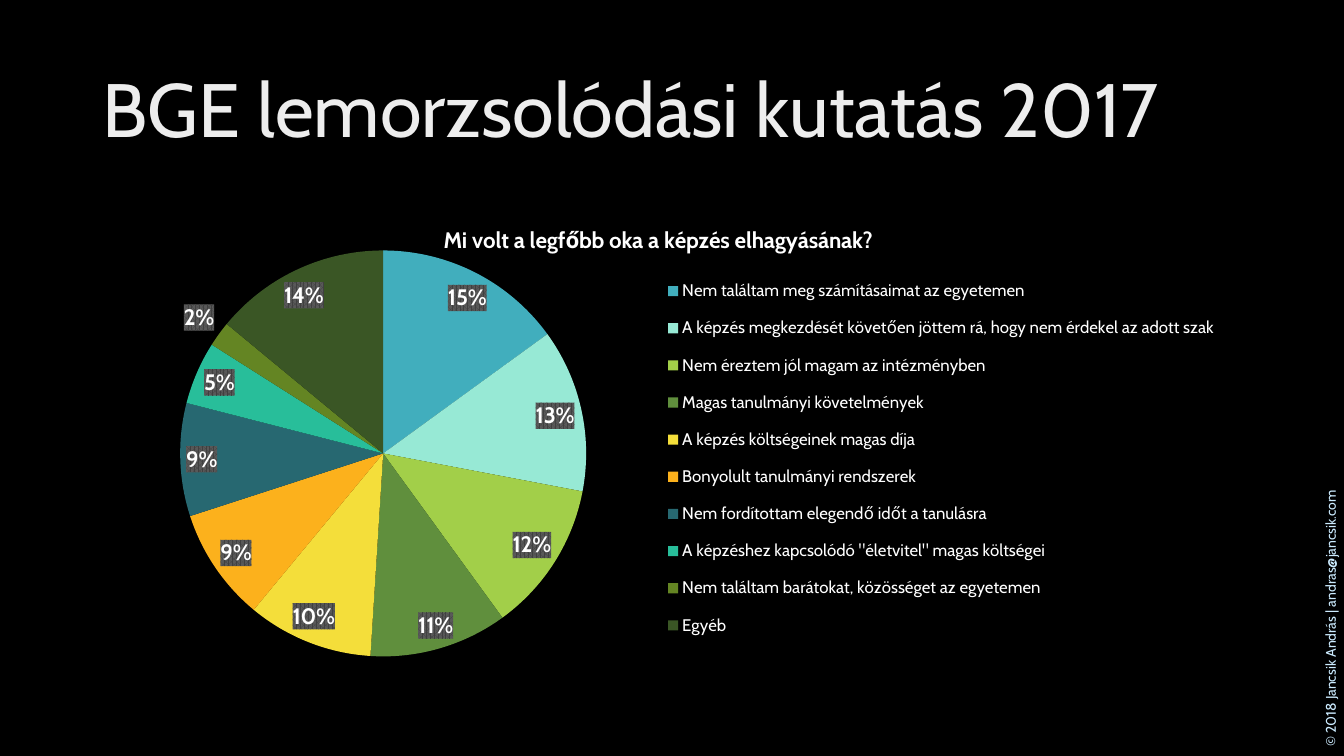
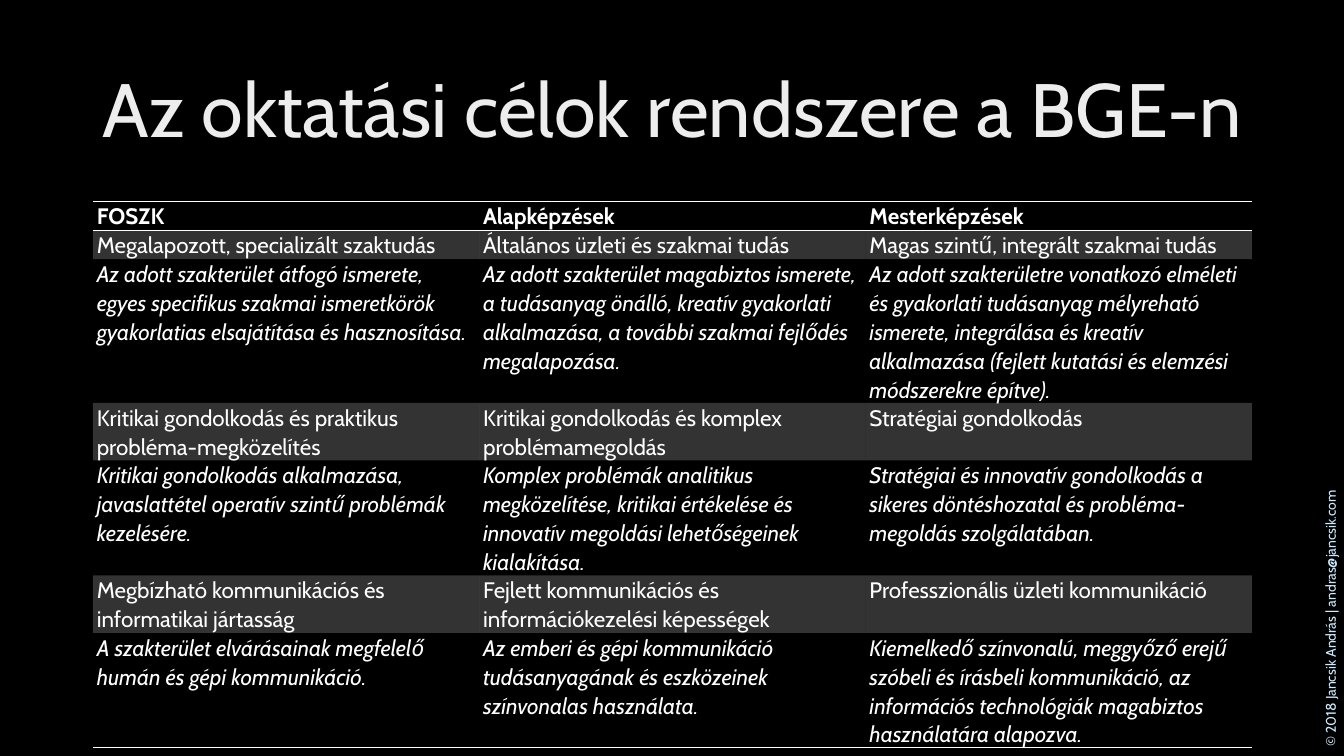
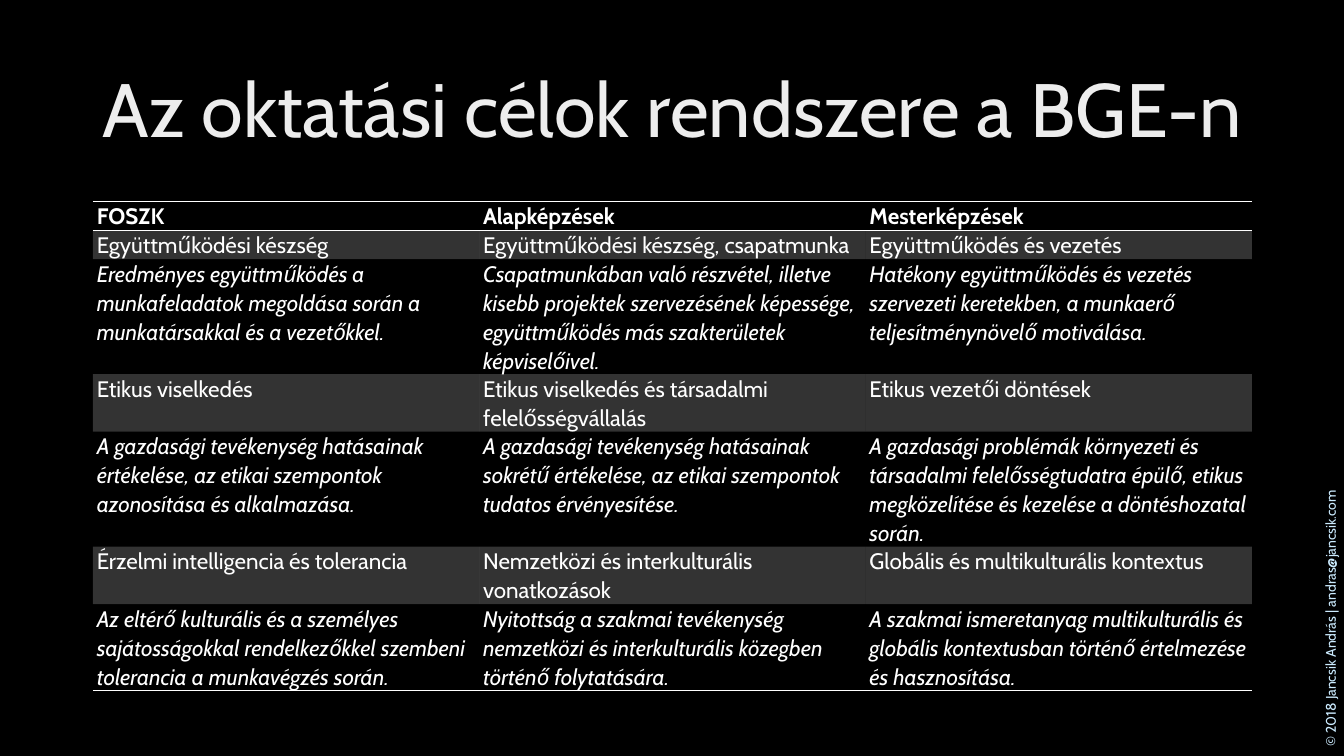
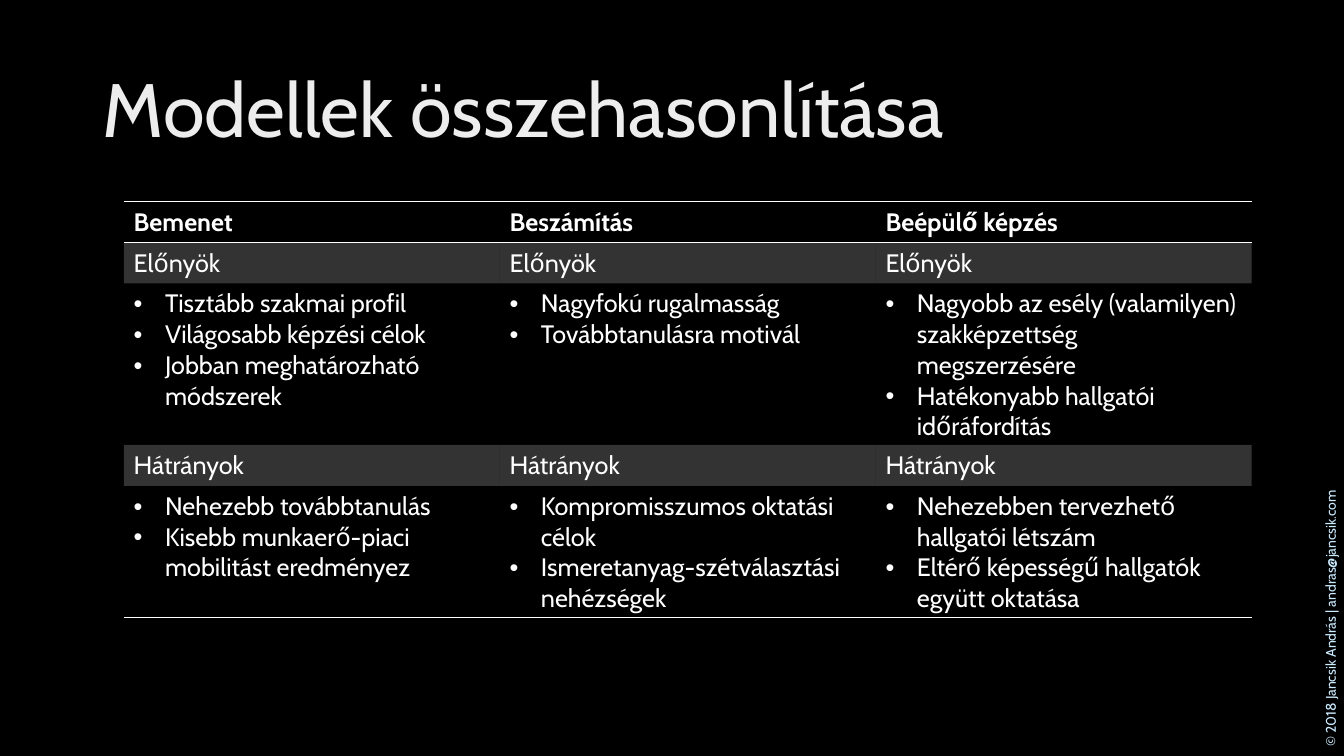
import dataclasses

import pptx
import pptx.chart.data
import pptx.dml.color
import pptx.enum.chart
import pptx.enum.text
import pptx.oxml
import pptx.oxml.ns
import pptx.util

Cm = pptx.util.Cm
Pt = pptx.util.Pt
qn = pptx.oxml.ns.qn


@dataclasses.dataclass(frozen=True)
class Theme:
    font: str = "Cabin"
    back: str = "000000"
    text: str = "FFFFFF"
    title: str = "EDEDED"
    foot: str = "CCECFF"
    label_front: str = "404040"
    label_back: str = "595959"
    slices: tuple = ("41AEBD", "97E9D5", "A2CF49", "608F3D", "F4DE3A",
                     "FCB11C", "276871", "28BE9A", "648523", "3A5625")
    band_alpha: int = 20
    title_size: int = 54
    foot_size: int = 10
    chart_size: int = 16
    key_size: int = 12


@dataclasses.dataclass(frozen=True)
class Look:
    """How the cells of a table are set."""
    size: int
    side: float
    edge: float
    height: float
    lead: float
    italic: bool = False
    bullet: bool = False


THEME = Theme()
DENSE = Look(size=16, side=0.1, edge=0, height=0.7, lead=1.07, italic=True)
LOOSE = Look(size=18, side=0.25, edge=0.13, height=1.03, lead=1, bullet=True)

WIDE, HIGH = 33.87, 19.05
TITLE_BOX = (2.34, 1.02, 29.21, 3.68)
FOOT_BOX = (24, 9.2, HIGH, 0.69)
TABLE_BOX = (2.34, 5.08, 29.21)
MODEL_BOX = (3.12, 5.08, 28.42)
CHART_BOX = (3.12, 5.08, 28.42, 12.09)

FOOT = "© 2018 Jancsik András | andras@jancsik.com"
GOALS = "Az oktatási célok rendszere a BGE-n"
LEVELS = ("FOSZK", "Alapképzések", "Mesterképzések")

REASONS = (
    ("Nem találtam meg számításaimat az egyetemen", 15),
    ("A képzés megkezdését követően jöttem rá, hogy nem érdekel az adott szak", 13),
    ("Nem éreztem jól magam az intézményben", 12),
    ("Magas tanulmányi követelmények", 11),
    ("A képzés költségeinek magas díja", 10),
    ("Bonyolult tanulmányi rendszerek", 9),
    ("Nem fordítottam elegendő időt a tanulásra", 9),
    ('A képzéshez kapcsolódó "életvitel" magas költségei', 5),
    ("Nem találtam barátokat, közösséget az egyetemen", 2),
    ("Egyéb", 14),
)

SKILLS = (
    LEVELS,
    ("Megalapozott, specializált szaktudás",
     "Általános üzleti és szakmai tudás",
     "Magas szintű, integrált szakmai tudás"),
    ("Az adott szakterület átfogó ismerete, egyes specifikus szakmai "
     "ismeretkörök gyakorlatias elsajátítása és hasznosítása.",
     "Az adott szakterület magabiztos ismerete, a tudásanyag önálló, kreatív "
     "gyakorlati alkalmazása, a további szakmai fejlődés megalapozása.",
     "Az adott szakterületre vonatkozó elméleti és gyakorlati tudásanyag "
     "mélyreható ismerete, integrálása és kreatív alkalmazása (fejlett "
     "kutatási és elemzési módszerekre építve)."),
    ("Kritikai gondolkodás és praktikus probléma-megközelítés",
     "Kritikai gondolkodás és komplex problémamegoldás",
     "Stratégiai gondolkodás"),
    ("Kritikai gondolkodás alkalmazása, javaslattétel operatív szintű "
     "problémák kezelésére.",
     "Komplex problémák analitikus megközelítése, kritikai értékelése és "
     "innovatív megoldási lehetőségeinek kialakítása.",
     "Stratégiai és innovatív gondolkodás a sikeres döntéshozatal és "
     "probléma-megoldás szolgálatában."),
    ("Megbízható kommunikációs és informatikai jártasság",
     "Fejlett kommunikációs és információkezelési képességek",
     "Professzionális üzleti kommunikáció"),
    ("A szakterület elvárásainak megfelelő humán és gépi kommunikáció.",
     "Az emberi és gépi kommunikáció tudásanyagának és eszközeinek "
     "színvonalas használata.",
     "Kiemelkedő színvonalú, meggyőző erejű szóbeli és írásbeli kommunikáció, "
     "az információs technológiák magabiztos használatára alapozva."),
)

VALUES = (
    LEVELS,
    ("Együttműködési készség",
     "Együttműködési készség, csapatmunka",
     "Együttműködés és vezetés"),
    ("Eredményes együttműködés a munkafeladatok megoldása során a "
     "munkatársakkal és a vezetőkkel.",
     "Csapatmunkában való részvétel, illetve kisebb projektek szervezésének "
     "képessége, együttműködés más szakterületek képviselőivel.",
     "Hatékony együttműködés és vezetés szervezeti keretekben, a munkaerő "
     "teljesítménynövelő motiválása."),
    ("Etikus viselkedés",
     "Etikus viselkedés és társadalmi felelősségvállalás",
     "Etikus vezetői döntések"),
    ("A gazdasági tevékenység hatásainak értékelése, az etikai szempontok "
     "azonosítása és alkalmazása.",
     "A gazdasági tevékenység hatásainak sokrétű értékelése, az etikai "
     "szempontok tudatos érvényesítése.",
     "A gazdasági problémák környezeti és társadalmi felelősségtudatra épülő, "
     "etikus megközelítése és kezelése a döntéshozatal során."),
    ("Érzelmi intelligencia és tolerancia",
     "Nemzetközi és interkulturális vonatkozások",
     "Globális és multikulturális kontextus"),
    ("Az eltérő kulturális és a személyes sajátosságokkal rendelkezőkkel "
     "szembeni tolerancia a munkavégzés során.",
     "Nyitottság a szakmai tevékenység nemzetközi és interkulturális "
     "közegben történő folytatására.",
     "A szakmai ismeretanyag multikulturális és globális kontextusban "
     "történő értelmezése és hasznosítása."),
)

# A body cell holds one line for each paragraph.
MODELS = (
    ("Bemenet", "Beszámítás", "Beépülő képzés"),
    ("Előnyök",) * 3,
    ("Tisztább szakmai profil\nVilágosabb képzési célok\n"
     "Jobban meghatározható módszerek",
     "Nagyfokú rugalmasság\nTovábbtanulásra motivál",
     "Nagyobb az esély (valamilyen) szakképzettség megszerzésére\n"
     "Hatékonyabb hallgatói időráfordítás"),
    ("Hátrányok",) * 3,
    ("Nehezebb továbbtanulás\nKisebb munkaerő-piaci mobilitást eredményez",
     "Kompromisszumos oktatási célok\nIsmeretanyag-szétválasztási nehézségek",
     "Nehezebben tervezhető hallgatói létszám\n"
     "Eltérő képességű hallgatók együtt oktatása"),
)


def rgb(code):
    return pptx.dml.color.RGBColor.from_string(code)


def xml(tag, body="", attrs=""):
    """Make one element of the drawing or chart namespace."""
    names = pptx.oxml.ns.nsdecls("a", "c")
    return pptx.oxml.parse_xml(f"<{tag} {names} {attrs}>{body}</{tag}>")


def style(font, size, color, bold=False, italic=False):
    font.name, font.size = THEME.font, Pt(size)
    font.bold, font.italic = bold, italic
    font.color.rgb = rgb(color)


def write(para, text, *look, **extra):
    run = para.add_run()
    run.text = text
    style(run.font, *look, **extra)


def label(slide, box, text, size, color, lead=1.0, turn=0):
    """Add a text box of one paragraph."""
    shape = slide.shapes.add_textbox(*map(Cm, box))
    shape.rotation = turn
    frame = shape.text_frame
    frame.word_wrap = True
    frame.vertical_anchor = pptx.enum.text.MSO_ANCHOR.MIDDLE
    para = frame.paragraphs[0]
    para.line_spacing = lead
    write(para, text, size, color)


def page(deck, title):
    """Add a slide with the shared background, title and side line."""
    slide = deck.slides.add_slide(deck.slide_layouts[6])
    fill = slide.background.fill
    fill.solid()
    fill.fore_color.rgb = rgb(THEME.back)
    label(slide, FOOT_BOX, FOOT, THEME.foot_size, THEME.foot, turn=270)
    label(slide, TITLE_BOX, title, THEME.title_size, THEME.title, lead=0.9)
    return slide


def shade(cell):
    """Fill a cell with the see-through band colour."""
    cell.fill.solid()
    cell.fill.fore_color.rgb = rgb(THEME.text)
    color = cell.fill._xPr.find(".//" + qn("a:srgbClr"))
    color.append(xml("a:alpha", attrs=f'val="{THEME.band_alpha * 1000}"'))


def rule(cell, tag):
    """Draw one border of a cell."""
    paint = f'<a:solidFill><a:srgbClr val="{THEME.text}"/></a:solidFill>'
    line = xml(tag, paint, f'w="{Pt(1)}"')
    cell._tc.get_or_add_tcPr().insert(0, line)


def dot(para):
    props = para._p.get_or_add_pPr()
    indent = Cm(0.79)
    props.set("marL", str(indent))
    props.set("indent", str(-indent))
    props.append(xml("a:buFont", attrs='typeface="Arial"'))
    props.append(xml("a:buChar", attrs='char="•"'))


def fill_cell(cell, text, look, head, body):
    cell.margin_left = cell.margin_right = Cm(look.side)
    cell.margin_top = cell.margin_bottom = Cm(look.edge)
    frame = cell.text_frame
    for spot, line in enumerate(text.split("\n")):
        para = frame.add_paragraph() if spot else frame.paragraphs[0]
        para.line_spacing = look.lead
        if body and look.bullet:
            dot(para)
        write(para, line, look.size, THEME.text, bold=head,
              italic=body and look.italic)


def grid(slide, box, rows, look):
    """Add a table: a head row, then bands and bodies by turns."""
    left, top, width = box
    count, cols = len(rows), len(rows[0])
    sizes = map(Cm, (left, top, width, look.height * count))
    table = slide.shapes.add_table(count, cols, *sizes).table
    table.first_row = table.horz_banding = False
    plain = "{2D5ABB26-0587-4C30-8999-92F81FD0307C}"
    table._tbl.find(".//" + qn("a:tableStyleId")).text = plain
    for y, row in enumerate(rows):
        head, band = y == 0, y % 2 == 1
        for x, text in enumerate(row):
            cell = table.cell(y, x)
            fill_cell(cell, text, look, head, not head and not band)
            if band:
                shade(cell)
            else:
                cell.fill.background()
            if head or y == count - 1:
                rule(cell, "a:lnB")
            if head:
                rule(cell, "a:lnT")


def place(node, index, x, y, w=None, h=None, inner=False):
    """Give a chart part a fixed place, in shares of the chart."""
    for old in node.findall(qn("c:layout")):
        node.remove(old)
    body = '<c:layoutTarget val="inner"/>' if inner else ""
    body += '<c:xMode val="edge"/><c:yMode val="edge"/>'
    for tag, share in zip("xywh", (x, y, w, h)):
        if share is not None:
            body += f'<c:{tag} val="{share}"/>'
    node.insert(index, xml("c:layout", f"<c:manualLayout>{body}</c:manualLayout>"))


def tag_slices(plot):
    """Show the share of each slice on a patterned ground."""
    plot.has_data_labels = True
    tags = plot.data_labels
    tags.show_percentage, tags.show_value = True, False
    tags.number_format, tags.number_format_is_linked = "0%", False
    tags.position = pptx.enum.chart.XL_LABEL_POSITION.BEST_FIT
    style(tags.font, THEME.chart_size, THEME.text, bold=True)
    ground = xml("c:spPr", '<a:pattFill prst="pct75">'
                 f'<a:fgClr><a:srgbClr val="{THEME.label_front}"/></a:fgClr>'
                 f'<a:bgClr><a:srgbClr val="{THEME.label_back}"/></a:bgClr>'
                 "</a:pattFill>")
    tags._element.find(qn("c:txPr")).addprevious(ground)


def pie(slide, box, title, items):
    data = pptx.chart.data.CategoryChartData()
    data.categories = [name for name, share in items]
    data.add_series("Series 1", [share for name, share in items])
    kind = pptx.enum.chart.XL_CHART_TYPE.PIE
    chart = slide.shapes.add_chart(kind, *map(Cm, box), data).chart
    style(chart.font, THEME.foot_size, THEME.text)

    chart.has_title = True
    write(chart.chart_title.text_frame.paragraphs[0], title,
          THEME.chart_size, THEME.text, bold=True)
    chart.has_legend = True
    chart.legend.position = pptx.enum.chart.XL_LEGEND_POSITION.RIGHT
    chart.legend.include_in_layout = False
    style(chart.legend.font, THEME.key_size, THEME.text)

    plot = chart.plots[0]
    plot.vary_by_categories = True
    for spot, color in enumerate(THEME.slices):
        form = plot.series[0].points[spot].format
        form.fill.solid()
        form.fill.fore_color.rgb = rgb(color)
        form.line.fill.background()
    tag_slices(plot)

    root = chart.element
    place(root.find(".//" + qn("c:plotArea")), 0, 0.05, 0.1, 0.36, 0.85, inner=True)
    place(root.find(".//" + qn("c:title")), 1, 0.28, 0.04)
    place(root.find(".//" + qn("c:legend")), 1, 0.47, 0.13, 0.51, 0.81)


def main():
    deck = pptx.Presentation()
    deck.slide_width, deck.slide_height = Cm(WIDE), Cm(HIGH)
    pie(page(deck, "BGE lemorzsolódási kutatás 2017"), CHART_BOX,
        "Mi volt a legfőbb oka a képzés elhagyásának?", REASONS)
    grid(page(deck, GOALS), TABLE_BOX, SKILLS, DENSE)
    grid(page(deck, GOALS), TABLE_BOX, VALUES, DENSE)
    grid(page(deck, "Modellek összehasonlítása"), MODEL_BOX, MODELS, LOOSE)
    deck.save("out.pptx")


if __name__ == "__main__":
    main()
